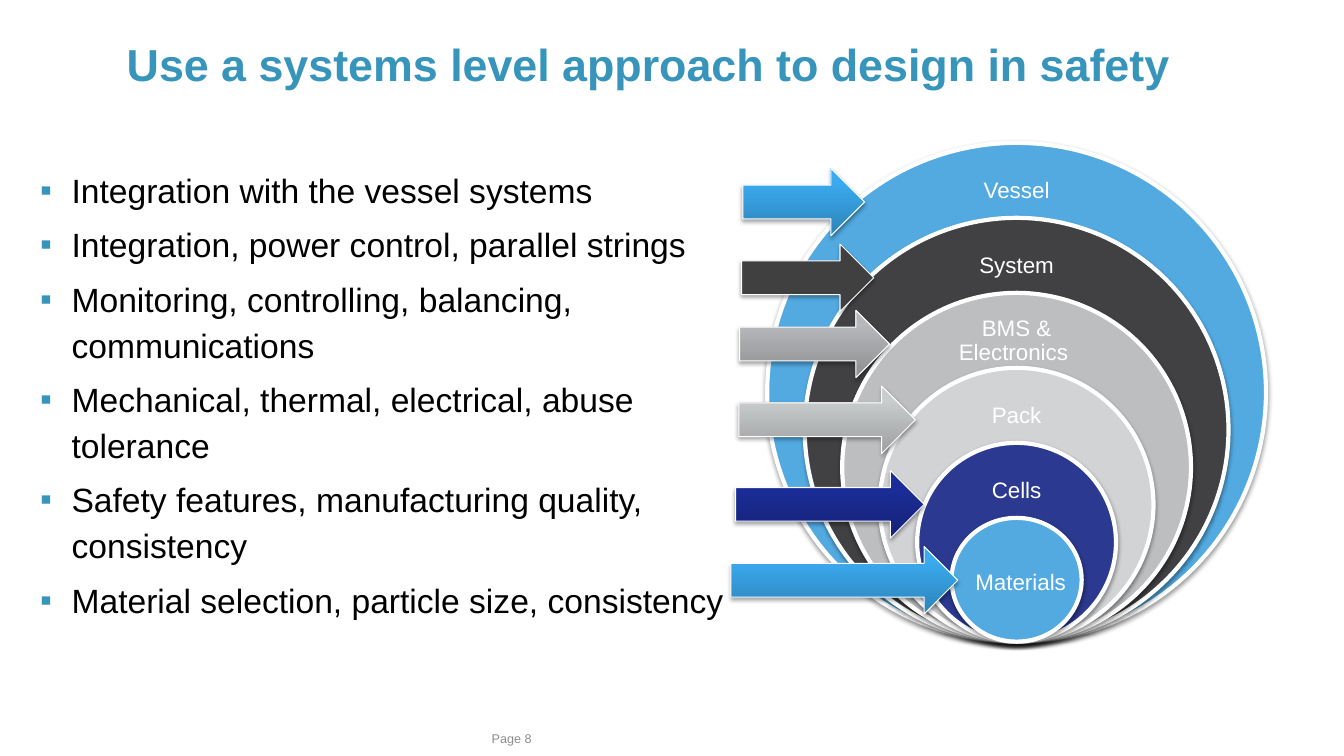
from lxml import etree
from pptx import Presentation
from pptx import util as u
from pptx.dml.color import RGBColor
from pptx.enum import shapes, text
from pptx.oxml.ns import qn

# Content; lengths in cm
TITLE = "Use a systems level approach to design in safety "
POINTS = [
    "Integration with the vessel systems",
    "Integration, power control, parallel strings",
    "Monitoring, controlling, balancing, communications",
    "Mechanical, thermal, electrical, abuse tolerance",
    "Safety features, manufacturing quality, consistency",
    "Material selection, particle size, consistency",
]
RINGS = [  # label, colour, label width
    ("Vessel", "52AAE1", 4.72),
    ("System", "414042", 4.6),
    ("BMS & Electronics ", "BCBEC0", 4.55),
    ("Pack", "D1D3D4", 3.73),
    ("Cells", "2B3990", 3.28),
    ("Materials", "52AAE1", 3.76),
]
BLUE = ("2D83B8", "3BAAEF", "37ABF3")
ARROWS = [  # left, top, width, colours from bottom to top
    (18.42, 13.77, 5.72, BLUE),
    (18.54, 11.86, 4.75, ("152277", "1B2D9A", "192B9D")),
    (18.62, 9.73, 4.45, ("9C9E9F", "CACDCE", "CBCECF")),
    (18.64, 7.82, 3.78, ("8C8E90", "B6B8BB", "B6B9BC")),
    (18.69, 6.15, 3.33, ("404040",)),
    (18.72, 4.24, 3.07, BLUE),
]
ARROW_HEIGHT = 1.7
STOPS = (0, 80, 100)
ACCENT, WHITE = "3795BB", "FFFFFF"
CENTER_X, BOTTOM, OUTER, STEP = 25.62, 16.17, 12.57, 1.89
CORE_WIDTH = 3.28

deck = Presentation()
deck.slide_width, deck.slide_height = u.Cm(33.87), u.Cm(19.05)
slide = deck.slides.add_slide(deck.slide_layouts[1])


def rgb(value):
    return RGBColor.from_string(value)


def place(part, left, top, width, height):
    part.left, part.top = u.Cm(left), u.Cm(top)
    part.width, part.height = u.Cm(width), u.Cm(height)


def box(left, top, width, height):
    return slide.shapes.add_textbox(*map(u.Cm, (left, top, width, height)))


def write(part, *lines, size=16, color=WHITE, bold=False, align=None, spacing=1,
          after=0, anchor=text.MSO_ANCHOR.TOP, inset=None, bullet=None):
    frame = part.text_frame
    frame.word_wrap = True
    frame.auto_size = text.MSO_AUTO_SIZE.NONE
    frame.vertical_anchor = anchor
    if inset is not None:
        frame.margin_left = frame.margin_right = u.Cm(inset)
        frame.margin_top = frame.margin_bottom = u.Cm(inset)
    for i, line in enumerate(lines):
        par = frame.add_paragraph() if i else frame.paragraphs[0]
        if bullet:
            par.level = 1
            props = par._p.get_or_add_pPr()
            props.set("marL", str(u.Cm(0.79)))
            props.set("indent", str(-u.Cm(0.79)))
            tint = etree.SubElement(props, qn("a:buClr"))
            etree.SubElement(tint, qn("a:srgbClr"), val=ACCENT)
            etree.SubElement(props, qn("a:buFont"), typeface="Arial")
            etree.SubElement(props, qn("a:buChar"), char=bullet)
        par.alignment, par.line_spacing = align, spacing
        par.space_before, par.space_after = u.Pt(0), u.Pt(after)
        run = par.add_run()
        run.text = line
        run.font.name, run.font.size, run.font.bold = "Arial", u.Pt(size), bold
        run.font.color.rgb = rgb(color)


def draw(kind, left, top, width, height, colors, line, opacity, distance):
    part = slide.shapes.add_shape(kind, *map(u.Cm, (left, top, width, height)))
    props = part._element.spPr
    if len(colors) == 1:
        part.fill.solid()
        part.fill.fore_color.rgb = rgb(colors[0])
    else:
        part.fill.gradient()
        part.fill.gradient_angle = 90
        stops = props.find(qn("a:gradFill")).find(qn("a:gsLst"))
        stops.clear()
        for position, color in zip(STOPS, colors):
            stop = etree.SubElement(stops, qn("a:gs"), pos=str(position * 1000))
            etree.SubElement(stop, qn("a:srgbClr"), val=color)
    part.line.color.rgb = rgb(WHITE)
    part.line.width = u.Pt(line)
    # Soft shadow straight below
    part.shadow.inherit = False
    shadow = etree.SubElement(
        props.find(qn("a:effectLst")), qn("a:outerShdw"), blurRad=str(u.Pt(3.1)),
        dist=str(u.Pt(distance)), dir="5400000", rotWithShape="0")
    black = etree.SubElement(shadow, qn("a:srgbClr"), val="000000")
    etree.SubElement(black, qn("a:alpha"), val=str(opacity * 1000))


# Title and list
heading, points = slide.placeholders
place(heading, 0, 0.43, 33.02, 2.34)
write(heading, TITLE, size=32, color=ACCENT, bold=True,
      align=text.PP_ALIGN.CENTER, anchor=text.MSO_ANCHOR.MIDDLE)
place(points, 0.76, 4.01, 17.96, 11.76)
write(points, *POINTS, size=24, color="000000", spacing=1.14, after=6, bullet="▪")

# Nested rings resting on one bottom point
for level, (label, color, label_width) in enumerate(RINGS):
    height = OUTER - level * STEP
    width = max(height, CORE_WIDTH)
    top = BOTTOM - height
    draw(shapes.MSO_SHAPE.OVAL, CENTER_X - width / 2, top, width, height,
         (color,), 3, 38, 1.6)
    if level < len(RINGS) - 1:
        write(box(CENTER_X - label_width / 2, top + 0.61, label_width, 1.24), label,
              align=text.PP_ALIGN.CENTER, spacing=0.9, inset=0.3,
              anchor=text.MSO_ANCHOR.MIDDLE)

# Arrows from the list to the rings
for left, top, width, colors in ARROWS:
    draw(shapes.MSO_SHAPE.RIGHT_ARROW, left, top, width, ARROW_HEIGHT,
         colors, 0.75, 35, 1.8)

# Core label, above its arrow
core, _, core_width = RINGS[-1]
write(box(24.33, 14.2, core_width, 0.94), core)

# Page number
write(box(12.14, 18.21, 7.9, 0.81), "Page 8", size=9, color="8C8C8C",
      anchor=text.MSO_ANCHOR.MIDDLE)

deck.save("out.pptx")
